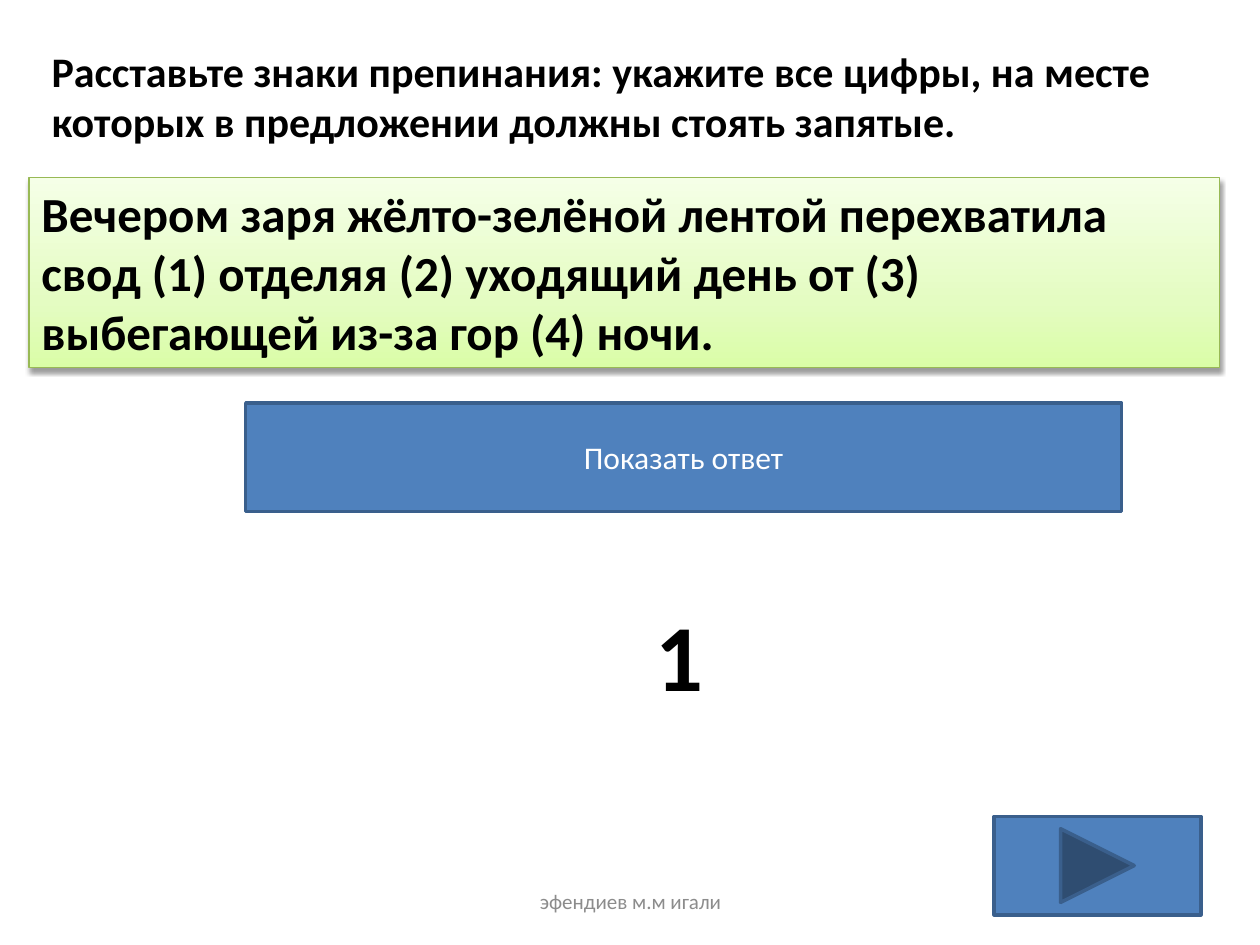
from pptx import Presentation
from pptx.dml.color import RGBColor
from pptx.enum import shapes, text
from pptx.oxml import parse_xml
from pptx.oxml.ns import nsdecls, qn
from pptx.util import Inches, Pt

BLACK = RGBColor(0, 0, 0)
WHITE = RGBColor(255, 255, 255)
GREY = RGBColor(0x8C, 0x8C, 0x8C)
BLUE = RGBColor(0x4F, 0x81, 0xBD)
NAVY = RGBColor(0x3A, 0x5F, 0x8C)
GREEN = RGBColor(0x98, 0xB9, 0x55)
STOPS = [
    (0, RGBColor(0xDA, 0xFD, 0xA7)),
    (35, RGBColor(0xE4, 0xFC, 0xC2)),
    (100, RGBColor(0xF5, 0xFF, 0xE7)),
]
LEFT, MID = text.PP_ALIGN.LEFT, text.PP_ALIGN.CENTER
TOP, MIDDLE = text.MSO_ANCHOR.TOP, text.MSO_ANCHOR.MIDDLE
KIND = shapes.MSO_SHAPE


def place(shape, box):
    shape.left, shape.top, shape.width, shape.height = map(Inches, box)


def write(shape, words, size, color=BLACK, bold=False, align=LEFT, anchor=TOP):
    frame = shape.text_frame
    frame.word_wrap = True
    frame.auto_size = text.MSO_AUTO_SIZE.NONE
    frame.vertical_anchor = anchor
    para = frame.paragraphs[0]
    para.alignment = align
    run = para.add_run()
    run.text = words
    font = run.font
    font.name, font.size, font.bold = "Calibri", Pt(size), bold
    font.color.rgb = color


def add_label(slide, box, words, size, **style):
    label = slide.shapes.add_textbox(*map(Inches, box))
    write(label, words, size, align=MID, **style)


def add_block(slide, kind, box, line, width):
    block = slide.shapes.add_shape(kind, *map(Inches, box))
    block.shadow.inherit = False
    block.line.color.rgb = line
    block.line.width = Pt(width)
    return block


def add_button(slide, kind, box):
    button = add_block(slide, kind, box, NAVY, 2)
    button.fill.solid()
    button.fill.fore_color.rgb = BLUE
    return button


def shade(shape):
    """Give the shape the green gradient, light at the top, and a soft shadow."""
    shape.fill.gradient()
    props = shape._element.spPr
    grad = props.find(qn("a:gradFill"))
    stops = "".join(
        f'<a:gs pos="{pos * 1000}"><a:srgbClr val="{color}"/></a:gs>'
        for pos, color in STOPS
    )
    props.replace(grad, parse_xml(
        f'<a:gradFill {nsdecls("a")} rotWithShape="1"><a:gsLst>{stops}</a:gsLst>'
        '<a:lin ang="16200000" scaled="0"/></a:gradFill>'
    ))
    props.find(qn("a:effectLst")).append(parse_xml(
        f'<a:outerShdw {nsdecls("a")} blurRad="{Pt(3.1)}" dist="{Pt(1.6)}" '
        'dir="5400000" rotWithShape="0"><a:srgbClr val="000000">'
        '<a:alpha val="38000"/></a:srgbClr></a:outerShdw>'
    ))


def main():
    deck = Presentation()
    deck.slide_width, deck.slide_height = Inches(10), Inches(7.5)
    slide = deck.slides.add_slide(deck.slide_layouts[5])

    title = slide.shapes.title
    place(title, (0.31, 0.31, 9.38, 0.91))
    write(title, "Расставьте знаки препинания: укажите все цифры, на месте "
          "которых в предложении должны стоять запятые.", 24, bold=True)

    task = add_block(slide, KIND.RECTANGLE, (0.23, 1.41, 9.45, 1.51), GREEN, 0.75)
    shade(task)
    write(task, "Вечером заря жёлто-зелёной лентой перехватила свод (1) отделяя "
          "(2) уходящий день от (3) выбегающей из-за гор (4) ночи.", 28, bold=True)

    reveal = add_button(slide, KIND.ACTION_BUTTON_CUSTOM, (1.95, 3.2, 6.95, 0.86))
    write(reveal, "Показать ответ", 18, WHITE, align=MID, anchor=MIDDLE)

    add_label(slide, (1.95, 4.69, 6.88, 1.01), "1", 54, bold=True)
    add_label(slide, (3.42, 6.95, 3.17, 0.4), "эфендиев м.м игали", 12,
              color=GREY, anchor=MIDDLE)
    add_button(slide, KIND.ACTION_BUTTON_FORWARD_OR_NEXT, (7.89, 6.48, 1.64, 0.78))

    deck.save("out.pptx")


if __name__ == "__main__":
    main()
